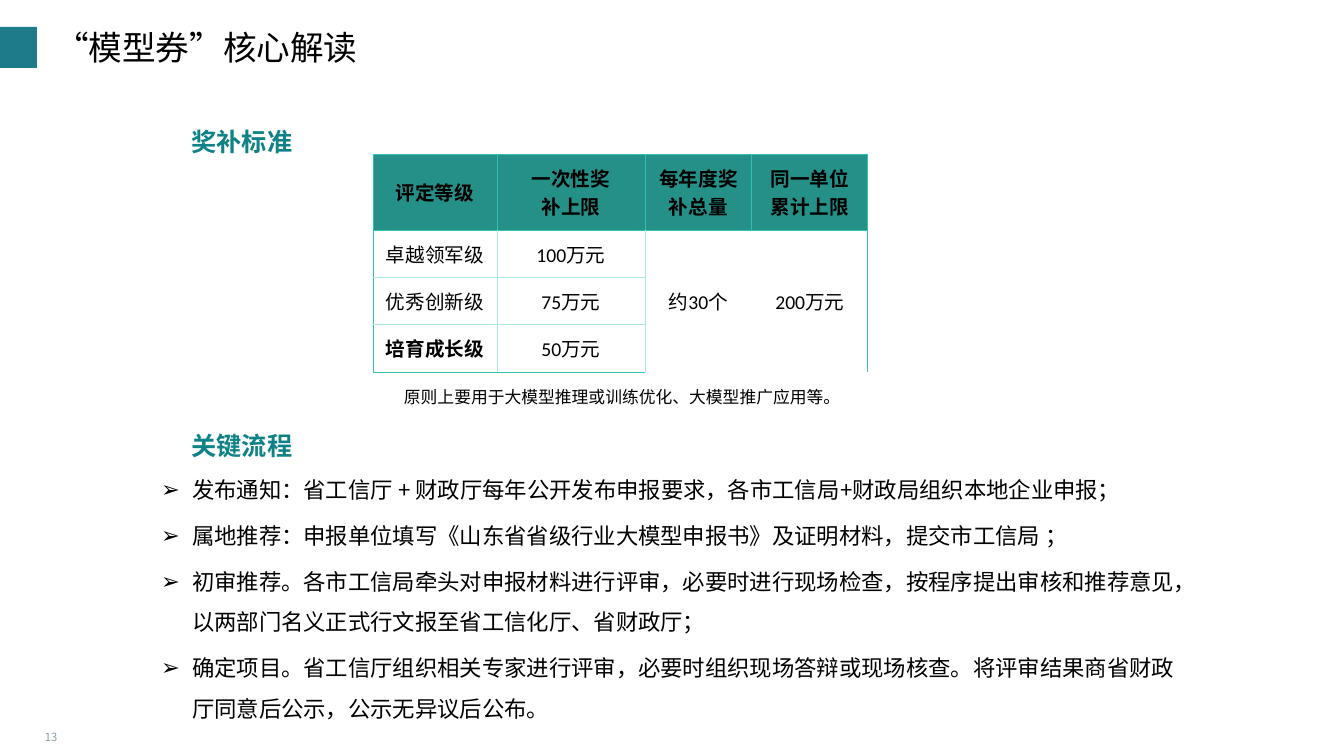
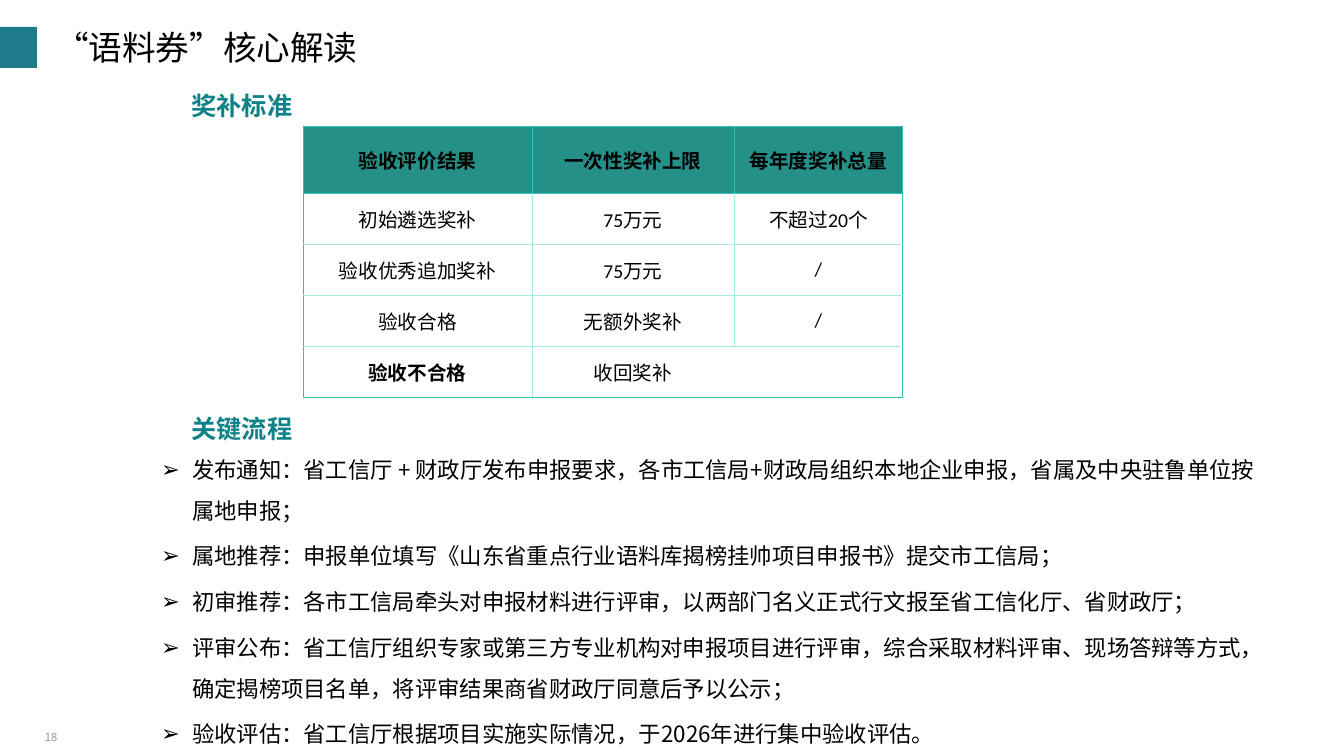
from lxml import etree
from pptx import Presentation
from pptx import util as u
from pptx.dml.color import RGBColor
from pptx.enum import lang, shapes, text
from pptx.oxml import ns

EMU_PER_PX = 12192000 / 1344
BLACK = RGBColor(0x00, 0x00, 0x00)
WHITE = RGBColor(0xFF, 0xFF, 0xFF)
BAND = RGBColor(0x1E, 0x7C, 0x8A)
HEADING = RGBColor(0x0F, 0x82, 0x87)
HEADER_FILL = RGBColor(0x24, 0x90, 0x87)
STRONG_EDGE = RGBColor(0x30, 0xC0, 0xB4)
LIGHT_EDGE = RGBColor(0xA9, 0xE9, 0xE4)
PAGE_GREY = RGBColor(0x87, 0x9B, 0xAA)
CJK = "Noto Sans CJK SC"


def px(length):
    return u.Emu(round(length * EMU_PER_PX))


def add_xml(parent, tag, **attributes):
    return etree.SubElement(parent, ns.qn(tag), attributes)


def write(frame, content, size=16, font=CJK, color=BLACK, bold=False,
          align=text.PP_ALIGN.LEFT, line=1.0, before=0, bullet=None):
    """Fill a text frame, one paragraph for each line of content."""
    for index, words in enumerate(content.split("\n")):
        paragraph = frame.add_paragraph() if index else frame.paragraphs[0]
        if bullet:
            properties = paragraph._p.get_or_add_pPr()
            properties.set("marL", str(px(31)))
            properties.set("indent", str(-px(31)))
            add_xml(properties, "a:buChar", char=bullet)
        paragraph.alignment = align
        paragraph.line_spacing = line
        paragraph.space_before = u.Pt(before if index else 0)
        run = paragraph.add_run()
        run.text = words
        run.font.size = u.Pt(size)
        run.font.name = font
        run.font.bold = bold
        run.font.color.rgb = color
        run.font.language_id = lang.MSO_LANGUAGE_ID.SIMPLIFIED_CHINESE
        add_xml(run._r.get_or_add_rPr(), "a:ea", typeface=CJK)


def draw_edges(cell, colors):
    """Draw the left, right, top and bottom edges; None leaves an edge open."""
    properties = cell._tc.get_or_add_tcPr()
    for side, color in zip("LRTB", colors):
        edge = add_xml(properties, f"a:ln{side}", w=str(u.Pt(0.75)))
        if color is None:
            add_xml(edge, "a:noFill")
        else:
            add_xml(add_xml(edge, "a:solidFill"), "a:srgbClr", val=str(color))


class Deck:
    def __init__(self):
        self.presentation = Presentation()
        self.presentation.slide_width = px(1344)
        self.presentation.slide_height = px(756)
        self.slide = None

    def start(self, title, page):
        layout = self.presentation.slide_layouts[1]
        self.slide = self.presentation.slides.add_slide(layout)
        band = self.slide.shapes.add_shape(
            shapes.MSO_SHAPE.RECTANGLE, *map(px, (0, 27, 37, 41)))
        band.shadow.inherit = False
        band.fill.solid()
        band.fill.fore_color.rgb = BAND
        band.line.fill.background()
        frame = self.place(self.slide.shapes.title, 45, 27, 961, 41)
        frame.vertical_anchor = text.MSO_ANCHOR.MIDDLE
        write(frame, title, size=24)
        number = self.label(str(page), 45, 729, 15, 14, inset=0,
                            size=8, color=PAGE_GREY, line=1.1)
        number.word_wrap = False

    def place(self, placeholder, left, top, width, height):
        placeholder.left, placeholder.top = px(left), px(top)
        placeholder.width, placeholder.height = px(width), px(height)
        frame = placeholder.text_frame
        frame.auto_size = text.MSO_AUTO_SIZE.NONE
        return frame

    def label(self, content, left, top, width, height, inset=None, **style):
        box = self.slide.shapes.add_textbox(*map(px, (left, top, width, height)))
        frame = box.text_frame
        frame.word_wrap = True
        if inset is not None:
            frame.margin_left = frame.margin_right = px(inset)
            frame.margin_top = frame.margin_bottom = px(inset)
        write(frame, content, **style)
        return frame

    def heading(self, content, top):
        self.label(content, 157, top, 170, 46, size=18, font="Arial",
                   color=HEADING, bold=True, align=text.PP_ALIGN.CENTER, line=1.2)

    def steps(self, items, top, width, height):
        frame = self.place(self.slide.placeholders[1], 151, top, width, height)
        write(frame, "\n".join(items), line=1.5, before=4, bullet="➢")

    def table(self, rows, left, top, widths, heights, merged=(), open_edges=()):
        """Merged columns span all body rows; open_edges are (row, column) cells
        without a line on their right."""
        grid = self.slide.shapes.add_table(
            len(rows), len(widths),
            *map(px, (left, top, sum(widths), sum(heights)))).table
        for column, width in zip(grid.columns, widths):
            column.width = px(width)
        for row, height in zip(grid.rows, heights):
            row.height = px(height)
        last_row, last_column = len(rows) - 1, len(widths) - 1

        def side_edge(r, c):
            """Line to the right of column c; -1 is the left border."""
            if (r, c) in open_edges:
                return None
            return STRONG_EDGE if r == 0 or c in (-1, last_column) else LIGHT_EDGE

        def level_edge(r, c):
            """Line below row r; -1 is the top border."""
            if c in merged and 0 < r < last_row:
                return None
            return STRONG_EDGE if r in (-1, 0, last_row) else LIGHT_EDGE

        for r, row in enumerate(rows):
            for c, content in enumerate(row):
                cell = grid.cell(r, c)
                draw_edges(cell, (side_edge(r, c - 1), side_edge(r, c),
                                  level_edge(r - 1, c), level_edge(r, c)))
                cell.fill.solid()
                cell.fill.fore_color.rgb = WHITE if r else HEADER_FILL
                cell.vertical_anchor = text.MSO_ANCHOR.MIDDLE
                if content:
                    write(cell.text_frame, content, size=14, font="Calibri",
                          bold=r == 0 or (r == last_row and c == 0),
                          align=text.PP_ALIGN.CENTER)
        for c in merged:
            grid.cell(1, c).merge(grid.cell(last_row, c))


def model_voucher(deck):
    deck.start("“模型券”核心解读", 13)
    deck.table(
        [["评定等级", "一次性奖\n补上限", "每年度奖补总量", "同一单位\n累计上限"],
         ["卓越领军级", "100万元", "约30个", "200万元"],
         ["优秀创新级", "75万元", None, None],
         ["培育成长级", "50万元", None, None]],
        373, 154, [124, 148, 107, 116], [76, 47, 47, 48],
        merged=(2, 3), open_edges={(r, 2) for r in (1, 2, 3)})
    deck.heading("奖补标准", 115)
    deck.steps([
        "发布通知：省工信厅 + 财政厅每年公开发布申报要求，各市工信局+财政局组织本地企业申报；",
        "属地推荐：申报单位填写《山东省省级行业大模型申报书》及证明材料，提交市工信局 ；",
        "初审推荐。各市工信局牵头对申报材料进行评审，必要时进行现场检查，按程序提出审核和推荐意见，"
        "以两部门名义正式行文报至省工信化厅、省财政厅；",
        "确定项目。省工信厅组织相关专家进行评审，必要时组织现场答辩或现场核查。"
        "将评审结果商省财政厅同意后公示，公示无异议后公布。",
    ], 458, 1051, 271)
    deck.heading("关键流程", 419)
    deck.label("原则上要用于大模型推理或训练优化、大模型推广应用等。",
               394, 372, 652, 40, size=12, line=1.5)


def corpus_voucher(deck):
    deck.start("“语料券”核心解读", 18)
    deck.table(
        [["验收评价结果", "一次性奖补上限", "每年度奖补总量"],
         ["初始遴选奖补", "75万元", "不超过20个"],
         ["验收优秀追加奖补", "75万元", "/"],
         ["验收合格", "无额外奖补", "/"],
         ["验收不合格", "收回奖补", None]],
        303, 126, [229, 202, 169], [67] + [51] * 4, open_edges={(4, 1)})
    deck.heading("奖补标准", 79)
    deck.steps([
        "发布通知：省工信厅 + 财政厅发布申报要求，各市工信局+财政局组织本地企业申报，"
        "省属及中央驻鲁单位按属地申报；",
        "属地推荐：申报单位填写《山东省重点行业语料库揭榜挂帅项目申报书》提交市工信局；",
        "初审推荐：各市工信局牵头对申报材料进行评审，以两部门名义正式行文报至省工信化厅、省财政厅；",
        "评审公布：省工信厅组织专家或第三方专业机构对申报项目进行评审，综合采取材料评审、现场答辩等方式，"
        "确定揭榜项目名单，将评审结果商省财政厅同意后予以公示；",
        "验收评估：省工信厅根据项目实施实际情况，于2026年进行集中验收评估。",
    ], 438, 1134, 318)
    deck.heading("关键流程", 402)


def main():
    deck = Deck()
    model_voucher(deck)
    corpus_voucher(deck)
    deck.presentation.save("out.pptx")


if __name__ == "__main__":
    main()
